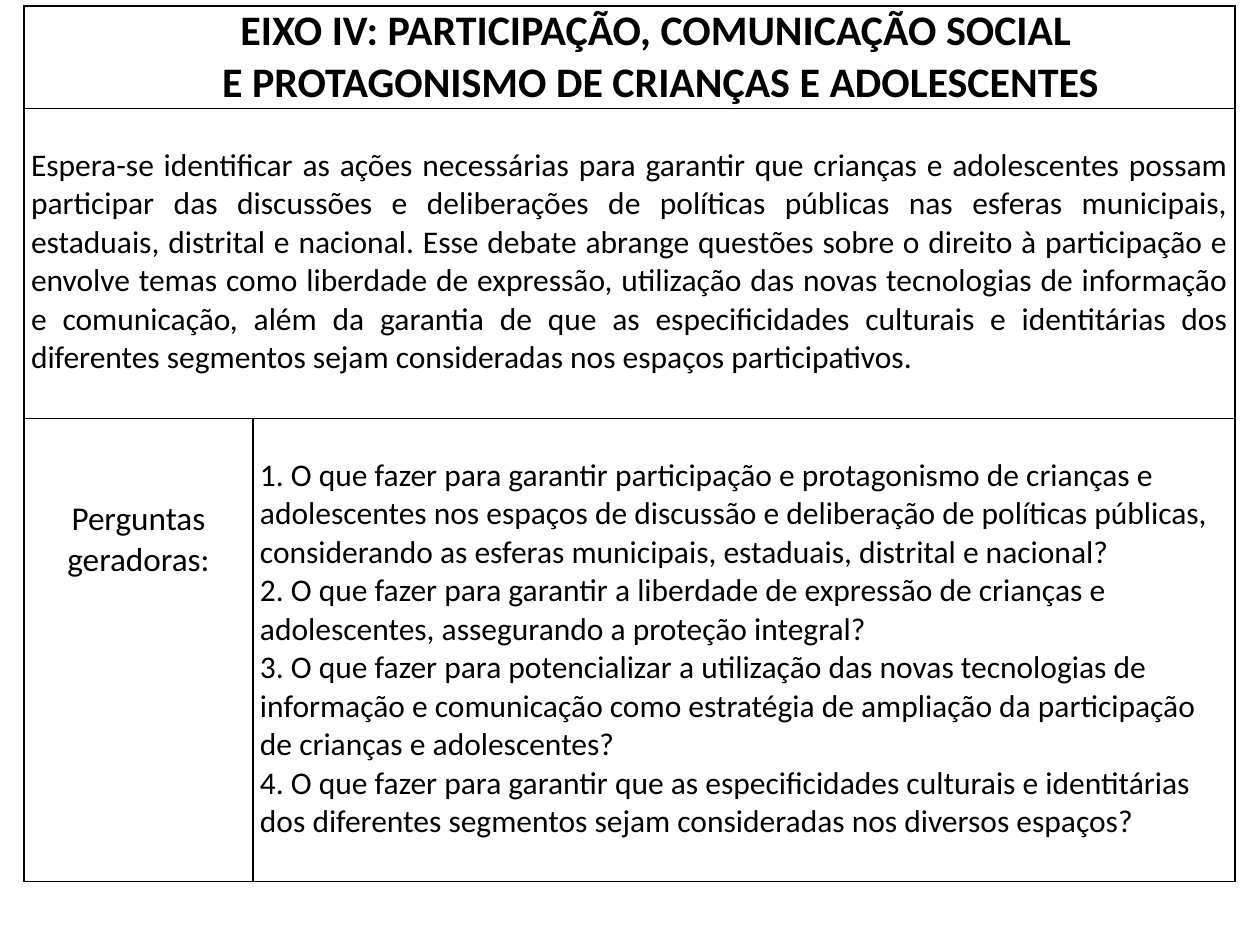
from lxml.etree import SubElement
from pptx import Presentation
from pptx.dml.color import RGBColor
from pptx.enum.text import MSO_ANCHOR, PP_ALIGN
from pptx.oxml import parse_xml
from pptx.oxml.ns import nsdecls, qn
from pptx.util import Emu, Pt

COLORS = {"text": "000000", "border": "000000", "paper": "FFFFFF"}
FONT = "Calibri"
EMU_PER_PX = 914400 / 126
COLUMNS = [229, 982]
ROWS = [102, 310, 463]

HEADING = [
    "EIXO IV: PARTICIPAÇÃO, COMUNICAÇÃO SOCIAL ",
    "E PROTAGONISMO DE CRIANÇAS E ADOLESCENTES",
]
SUMMARY = [
    "Espera-se identificar as ações necessárias para garantir que crianças e adolescentes "
    "possam participar das discussões e deliberações de políticas públicas nas esferas "
    "municipais, estaduais, distrital e nacional. Esse debate abrange questões sobre o direito "
    "à participação e envolve temas como liberdade de expressão, utilização das novas "
    "tecnologias de informação e comunicação, além da garantia de que as especificidades "
    "culturais e identitárias dos diferentes segmentos sejam consideradas nos espaços "
    "participativos."
]
LABEL = ["Perguntas geradoras:"]
QUESTIONS = [
    "1. O que fazer para garantir participação e protagonismo de crianças e adolescentes nos "
    "espaços de discussão e deliberação de políticas públicas, considerando as esferas "
    "municipais, estaduais, distrital e nacional?",
    "2. O que fazer para garantir a liberdade de expressão de crianças e adolescentes, "
    "assegurando a proteção integral?",
    "3. O que fazer para potencializar a utilização das novas tecnologias de informação e "
    "comunicação como estratégia de ampliação da participação de crianças e adolescentes?",
    "4. O que fazer para garantir que as especificidades culturais e identitárias dos "
    "diferentes segmentos sejam consideradas nos diversos espaços?",
]


def px(length):
    """Turn a length in px into EMU."""
    return Emu(round(length * EMU_PER_PX))


def style_cell(cell):
    """Give a cell a plain fill and a thin border on every side."""
    cell.fill.solid()
    cell.fill.fore_color.rgb = RGBColor.from_string(COLORS["paper"])
    properties = cell._tc.get_or_add_tcPr()
    for position, side in enumerate(("lnL", "lnR", "lnT", "lnB")):
        line = parse_xml(f'<a:{side} {nsdecls("a")} w="{Pt(1)}"/>')
        fill = SubElement(line, qn("a:solidFill"))
        SubElement(fill, qn("a:srgbClr"), val=COLORS["border"])
        properties.insert(position, line)


def write_cell(cell, texts, size, align, top=0, bold=False, indent=0):
    """Write one paragraph per text into a cell."""
    cell.margin_left = cell.margin_right = px(7)
    cell.margin_top, cell.margin_bottom = px(top), 0
    cell.vertical_anchor = MSO_ANCHOR.TOP
    frame = cell.text_frame
    for index, text in enumerate(texts):
        para = frame.add_paragraph() if index else frame.paragraphs[0]
        para.text = text
        para.alignment = align
        para.font.name = FONT
        para.font.size = Pt(size)
        para.font.bold = bold
        para.font.color.rgb = RGBColor.from_string(COLORS["text"])
        if indent:
            para._p.get_or_add_pPr().set("marL", str(px(indent)))


def add_grid(page):
    """Add the bordered table with its two full-width rows."""
    frame = page.shapes.add_table(
        len(ROWS), len(COLUMNS), px(24), px(6), px(sum(COLUMNS)), px(sum(ROWS))
    )
    table = frame.table
    table.first_row = table.horz_banding = False
    for column, width in zip(table.columns, COLUMNS):
        column.width = px(width)
    for row, height in zip(table.rows, ROWS):
        row.height = px(height)
    for cell in table.iter_cells():
        style_cell(cell)
    for row in range(2):
        table.cell(row, 0).merge(table.cell(row, 1))
    return table


def main():
    """Build the slide and save it."""
    deck = Presentation()
    deck.slide_width, deck.slide_height = px(1260), px(945)
    page = deck.slides.add_slide(deck.slide_layouts[6])
    table = add_grid(page)
    write_cell(table.cell(0, 0), HEADING, 24, PP_ALIGN.CENTER, bold=True, indent=62)
    write_cell(table.cell(1, 0), SUMMARY, 18, PP_ALIGN.JUSTIFY, top=38)
    write_cell(table.cell(2, 0), LABEL, 19, PP_ALIGN.CENTER, top=81)
    write_cell(table.cell(2, 1), QUESTIONS, 18, PP_ALIGN.LEFT, top=38)
    deck.save("out.pptx")


if __name__ == "__main__":
    main()
